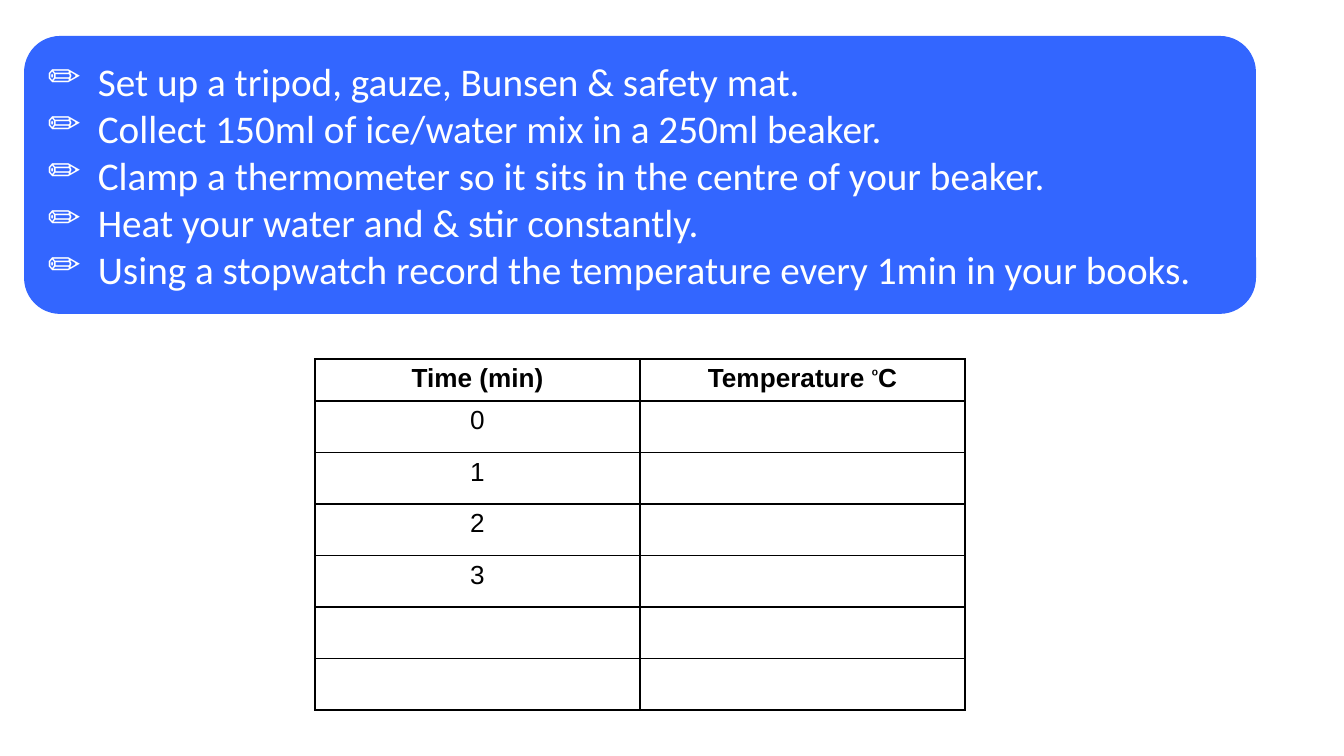
from lxml.etree import SubElement
from pptx import Presentation
from pptx.dml.color import RGBColor
from pptx.enum.shapes import MSO_SHAPE
from pptx.enum.text import MSO_ANCHOR, PP_ALIGN
from pptx.oxml.ns import qn
from pptx.util import Emu, Pt

PAGE_WIDTH, PAGE_HEIGHT = 1344, 756
SCALE = 9144000 / PAGE_WIDTH
BLUE, WHITE, BLACK = "3366FF", "FFFFFF", "000000"

STEPS = [
    "Set up a tripod, gauze, Bunsen & safety mat.",
    "Collect 150ml of ice/water mix in a 250ml beaker.",
    "Clamp a thermometer so it sits in the centre of your beaker.",
    "Heat your water and & stir constantly.",
    "Using a stopwatch record the temperature every 1min in your books.",
]
# Each cell is a list of text spans
RESULTS = [
    [["Time (min)"], ["Temperature ", "ᵒ", "C"]],
    [["0"], []],
    [["1"], []],
    [["2"], []],
    [["3"], []],
    [[], []],
    [[], []],
]


def px(length):
    return Emu(round(length * SCALE))


def color(value):
    return RGBColor.from_string(value)


def style(span, font, size, value, bold=False):
    span.font.name = font
    span.font.size = Pt(size)
    span.font.bold = bold
    span.font.color.rgb = color(value)


def add_bullet(para, symbol, indent):
    properties = para._p.get_or_add_pPr()
    properties.set("marL", str(px(indent)))
    properties.set("indent", str(-px(indent)))
    SubElement(properties, qn("a:buChar"), char=symbol)


def add_borders(cell, value, width):
    properties = cell._tc.get_or_add_tcPr()
    for position, side in enumerate(("a:lnL", "a:lnR", "a:lnT", "a:lnB")):
        line = properties.makeelement(qn(side), {"w": str(Pt(width))})
        fill = SubElement(line, qn("a:solidFill"))
        SubElement(fill, qn("a:srgbClr"), val=value)
        properties.insert(position, line)


def add_steps(page, left, top, width, height):
    panel = page.shapes.add_shape(
        MSO_SHAPE.ROUNDED_RECTANGLE, px(left), px(top), px(width), px(height))
    panel.adjustments[0] = 0.13
    panel.shadow.inherit = False
    panel.fill.solid()
    panel.fill.fore_color.rgb = color(BLUE)
    panel.line.fill.background()

    frame = panel.text_frame
    frame.word_wrap = True
    frame.vertical_anchor = MSO_ANCHOR.MIDDLE
    frame.text = "\n".join(STEPS)
    for para in frame.paragraphs:
        para.alignment = PP_ALIGN.LEFT
        add_bullet(para, "✏", 50)
        style(para.runs[0], "Calibri", 21, WHITE)


def fill_cell(cell, spans, bold):
    cell.fill.background()
    add_borders(cell, BLACK, 1)
    cell.margin_left = cell.margin_right = px(9)
    cell.margin_top = cell.margin_bottom = px(5)
    para = cell.text_frame.paragraphs[0]
    para.alignment = PP_ALIGN.CENTER
    for text in spans:
        span = para.add_run()
        span.text = text
        style(span, "Arial", 14, BLACK, bold)
        if text == "ᵒ":
            span.font._element.set("baseline", "30000")


def add_results(page, left, top, width, height, header_height):
    row_count, column_count = len(RESULTS), len(RESULTS[0])
    table = page.shapes.add_table(
        row_count, column_count, px(left), px(top), px(width), px(height)).table
    table.horz_banding = False
    row_height = (height - header_height) / (row_count - 1)
    for column in table.columns:
        column.width = px(width / column_count)
    for index, (row, contents) in enumerate(zip(table.rows, RESULTS)):
        is_header = index == 0
        row.height = px(header_height if is_header else row_height)
        for cell, spans in zip(row.cells, contents):
            fill_cell(cell, spans, is_header)


def main():
    deck = Presentation()
    deck.slide_width, deck.slide_height = px(PAGE_WIDTH), px(PAGE_HEIGHT)
    page = deck.slides.add_slide(deck.slide_layouts[6])

    # Results table, then the method panel above it
    add_results(page, 315, 359, 650, 351, header_height=42)
    add_steps(page, 24, 36, 1232, 278)
    deck.save("out.pptx")


if __name__ == "__main__":
    main()
